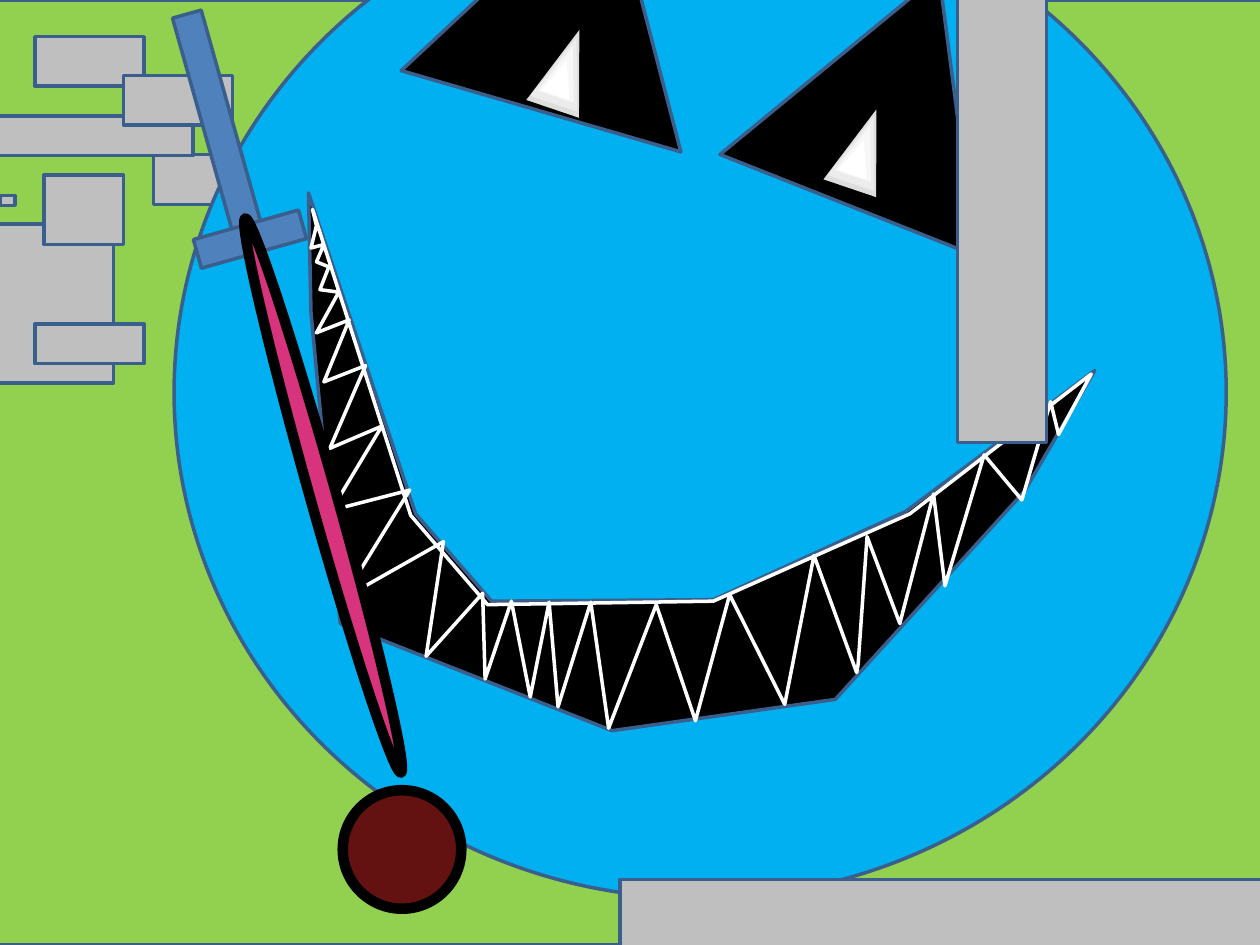
from pptx import Presentation
from pptx.dml.color import RGBColor
from pptx.enum.shapes import MSO_SHAPE
from pptx.util import Cm, Pt

GRASS = RGBColor(0x92, 0xD0, 0x50)
SKY = RGBColor(0x00, 0xB0, 0xF0)
STONE = RGBColor(0xBF, 0xBF, 0xBF)
STEEL = RGBColor(0x4F, 0x81, 0xBD)
OUTLINE = RGBColor(0x3A, 0x5F, 0x8C)
PINK = RGBColor(0xD8, 0x34, 0x7E)
MAROON = RGBColor(0x64, 0x11, 0x11)
BLACK = RGBColor(0x00, 0x00, 0x00)
WHITE = RGBColor(0xFF, 0xFF, 0xFF)

FIELD = (-1.09, 0, 29.59, 19.05)
FACE = (3.51, -2.29, 21.21, 20.4)
BALL = (6.91, 15.93, 2.39, 2.39)
EYES = [((8.66, -2.59, 5.87, 4.93), 16.2), ((15.24, -0.69, 5.54, 5), 21.6)]

GLINT_ANGLE = 18.7
GLINT_ORIGINS = [(10.85, 0.56), (16.84, 2.16)]
GLINT_LAYERS = [
    (0, 0, 1.12, 1.68, RGBColor(0xDE, 0xDE, 0xDE)),
    (0.05, 0.15, 0.99, 1.42, RGBColor(0xEC, 0xEC, 0xEC)),
    (0.15, 0.33, 0.76, 1.09, RGBColor(0xF7, 0xF7, 0xF7)),
    (0.15, 0.64, 0.61, 0.74, WHITE),
]

BACK_BLOCKS = [(-0.71, 4.52, 3, 3.2), (3.1, 3.12, 2.2, 1)]
FRONT_BLOCKS = [
    (0.71, 0.74, 2.2, 1), (-0.51, 2.34, 4.4, 0.8), (2.49, 1.52, 2.2, 1),
    (0.89, 3.53, 1.6, 1.4), (0.71, 6.53, 2.2, 0.8), (0, 3.94, 0.3, 0.2),
    (19.3, -0.28, 1.8, 9.2), (12.5, 17.73, 14.8, 1.6),
]

SWORD_ANGLE = -15.7
SWORD_HILT = [(4.09, 0.2, 0.6, 4.6), (3.94, 4.52, 2.2, 0.6)]
SWORD_BLADE = (6.25, 4.19, 0.53, 11.6)

MOUTH = [
    (6.27, 6.3), (6.86, 12.57), (12.34, 14.73), (16.84, 14.1),
    (20.65, 9.91), (22.07, 7.47), (18.26, 10.31), (14.38, 12.09),
    (9.91, 12.12), (8.38, 10.36), (6.22, 3.89),
]
TEETH = [
    (6.38, 4.55), (6.27, 5), (6.53, 4.93), (6.38, 5.28), (6.63, 5.38),
    (6.45, 5.84), (6.83, 5.89), (6.38, 6.71), (7.04, 6.45), (6.53, 7.7),
    (7.37, 7.37), (6.65, 9.04), (7.7, 8.59), (6.68, 10.29), (8.26, 9.88),
    (6.91, 12.07), (8.94, 10.92), (8.59, 13.23), (9.73, 11.96),
    (9.78, 13.69), (10.31, 12.12), (10.69, 14.05), (11.07, 12.14),
    (11.25, 14.25), (11.91, 12.14), (12.27, 14.68), (13.23, 12.19),
    (14.02, 14.53), (14.71, 11.99), (15.82, 14.2), (16.41, 11.2),
    (17.27, 13.56), (17.3, 13.39), (17.48, 10.82), (18.14, 12.57),
    (18.82, 9.96), (19.05, 11.81), (19.84, 9.17), (20.6, 10.08),
    (21.18, 8.1), (21.34, 8.76), (22, 7.54), (18.34, 10.36),
    (14.38, 12.12), (9.83, 12.19), (8.28, 10.39), (6.3, 4.22),
]


def paint(shape, fill, line=OUTLINE, width=2):
    """Set fill and outline; None leaves either one empty."""
    shape.shadow.inherit = False
    if fill is None:
        shape.fill.background()
    else:
        shape.fill.solid()
        shape.fill.fore_color.rgb = fill
    if line is None:
        shape.line.fill.background()
    else:
        shape.line.color.rgb = line
        shape.line.width = Pt(width)


def add_figure(shapes, kind, box, fill, angle=0, **outline):
    """Add a painted preset shape in a box given in centimetres."""
    shape = shapes.add_shape(kind, *[Cm(length) for length in box])
    shape.rotation = angle
    paint(shape, fill, **outline)


def add_polygon(shapes, points, fill, **outline):
    """Add a painted closed outline through points in centimetres."""
    corners = [(Cm(x), Cm(y)) for x, y in points]
    builder = shapes.build_freeform(*corners[0])
    builder.add_line_segments(corners[1:], close=True)
    paint(builder.convert_to_shape(), fill, **outline)


def main():
    """Build the slide of the smiling face, the town and the sword."""
    presentation = Presentation()
    presentation.slide_width, presentation.slide_height = Cm(25.4), Cm(19.05)
    slide = presentation.slides.add_slide(presentation.slide_layouts[6])
    shapes = slide.shapes

    add_figure(shapes, MSO_SHAPE.RECTANGLE, FIELD, GRASS)
    for box in BACK_BLOCKS:
        add_figure(shapes, MSO_SHAPE.RECTANGLE, box, STONE)
    add_figure(shapes, MSO_SHAPE.OVAL, FACE, SKY)
    for box, angle in EYES:
        add_figure(shapes, MSO_SHAPE.ISOSCELES_TRIANGLE, box, BLACK, angle)
    add_figure(shapes, MSO_SHAPE.OVAL, BALL, MAROON, line=BLACK, width=6)
    add_polygon(shapes, MOUTH, BLACK)
    add_polygon(shapes, TEETH, None, line=WHITE)

    for left, top in GLINT_ORIGINS:
        for across, down, width, height, color in GLINT_LAYERS:
            box = (left + across, top + down, width, height)
            add_figure(shapes, MSO_SHAPE.ISOSCELES_TRIANGLE, box, color,
                       GLINT_ANGLE, line=None)
    for box in FRONT_BLOCKS:
        add_figure(shapes, MSO_SHAPE.RECTANGLE, box, STONE)

    sword = shapes.add_group_shape().shapes
    for box in SWORD_HILT:
        add_figure(sword, MSO_SHAPE.RECTANGLE, box, STEEL, SWORD_ANGLE)
    add_figure(sword, MSO_SHAPE.OVAL, SWORD_BLADE, PINK, SWORD_ANGLE,
               line=BLACK, width=6)

    presentation.save("out.pptx")


if __name__ == "__main__":
    main()
